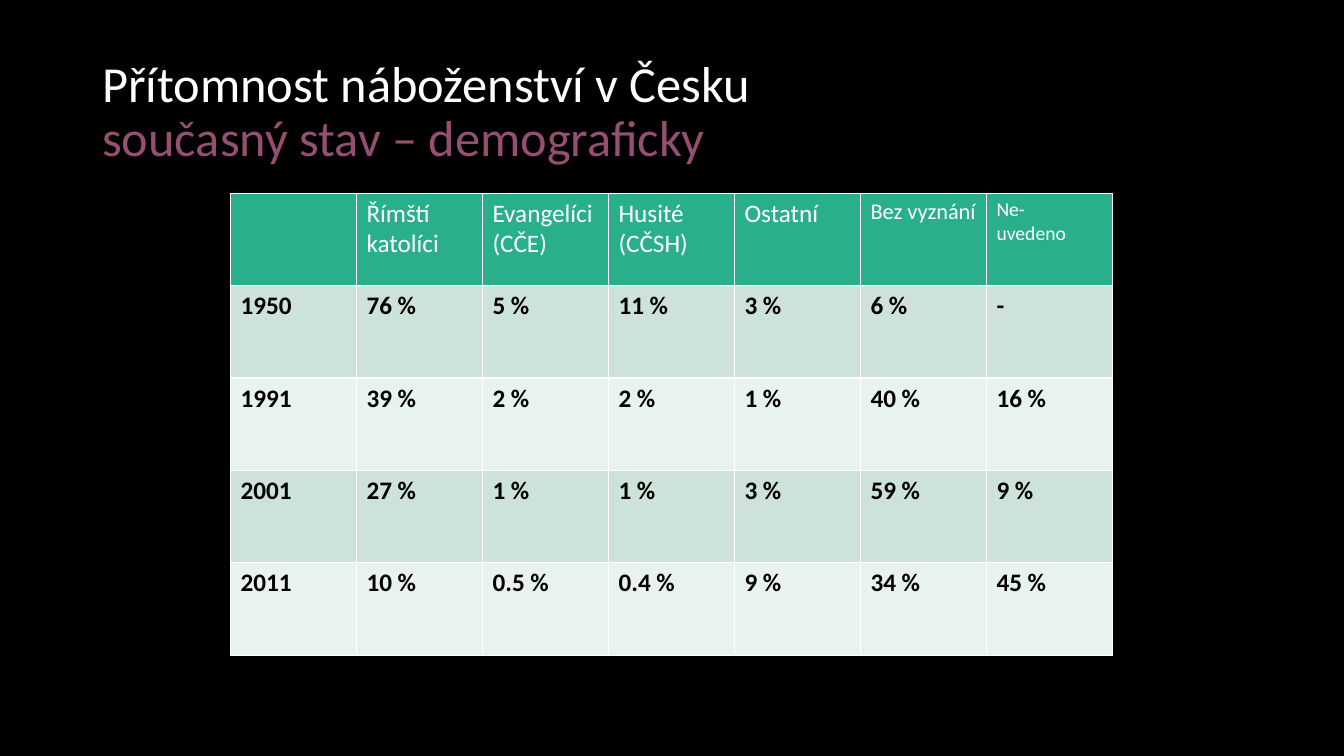
from lxml.etree import SubElement
from pptx import Presentation
from pptx.dml.color import RGBColor
from pptx.enum.text import MSO_ANCHOR
from pptx.oxml.ns import qn
from pptx.util import Pt

HEADER = ["", "Římští katolíci", "Evangelíci (CČE)", "Husité (CČSH)", "Ostatní", "Bez vyznání", "Ne-\nuvedeno"]
HEADER_SIZES = [18, 18, 18, 18, 18, 16, 14]
SHARES = [
    ["1950", "76 %", "5 %", "11 %", "3 %", "6 %", "-"],
    ["1991", "39 %", "2 %", "2 %", "1 %", "40 %", "16 %"],
    ["2001", "27 %", "1 %", "1 %", "3 %", "59 %", "9 %"],
    ["2011", "10 %", "0.5 %", "0.4 %", "9 %", "34 %", "45 %"],
]


def rgb(color):
    return RGBColor.from_string(color)


class SlideBuilder:
    font = "Calibri"
    white = "FFFFFF"
    black = "000000"
    accent = "954F72"
    header_fill = "29AF8C"
    band_fills = ["CDE3DA", "E8F2EE"]

    def __init__(self, prs):
        self.s = prs.slides.add_slide(prs.slide_layouts[6])
        fill = self.s.background.fill
        fill.solid()
        fill.fore_color.rgb = rgb(self.black)

    def style(self, r, size, color, bold=False):
        r.font.name = self.font
        r.font.size = Pt(size)
        r.font.bold = bold
        r.font.color.rgb = rgb(color)

    def title(self, left, top, width, height, lines):
        sp = self.s.shapes.add_textbox(Pt(left), Pt(top), Pt(width), Pt(height))
        tf = sp.text_frame
        tf.word_wrap = True
        tf.vertical_anchor = MSO_ANCHOR.MIDDLE
        p = tf.paragraphs[0]
        p.text = "\v".join(lines)
        p.line_spacing = 0.9
        for r, color in zip(p.runs, [self.white, self.accent]):
            self.style(r, 36, color)

    def borders(self, cell):
        tcPr = cell._tc.get_or_add_tcPr()
        for side in ["lnL", "lnR", "lnT", "lnB"]:
            ln = SubElement(tcPr, qn(f"a:{side}"), w=str(Pt(1)))
            fill = SubElement(ln, qn("a:solidFill"))
            SubElement(fill, qn("a:srgbClr"), val=self.white)

    def cell(self, cell, text, fill, size, color, bold):
        self.borders(cell)
        cell.fill.solid()
        cell.fill.fore_color.rgb = rgb(fill)
        cell.text_frame.text = text
        for p in cell.text_frame.paragraphs:
            for r in p.runs:
                self.style(r, size, color, bold)

    def table(self, left, top, col_width, row_height, header, sizes, rows):
        n_rows, n_cols = len(rows) + 1, len(header)
        table = self.s.shapes.add_table(
            n_rows, n_cols, Pt(left), Pt(top), Pt(col_width * n_cols), Pt(row_height * n_rows)
        ).table
        for j, (text, size) in enumerate(zip(header, sizes)):
            self.cell(table.cell(0, j), text, self.header_fill, size, self.white, False)
        for i, row in enumerate(rows):
            for j, text in enumerate(row):
                self.cell(table.cell(i + 1, j), text, self.band_fills[i % 2], 18, self.black, True)


def main():
    prs = Presentation()
    prs.slide_width, prs.slide_height = Pt(960), Pt(540)
    builder = SlideBuilder(prs)
    builder.title(66, 28.75, 828, 104.4, ["Přítomnost náboženství v Česku", "současný stav – demograficky"])
    builder.table(164.6, 138, 90, 66, HEADER, HEADER_SIZES, SHARES)
    prs.save("out.pptx")


if __name__ == "__main__":
    main()
